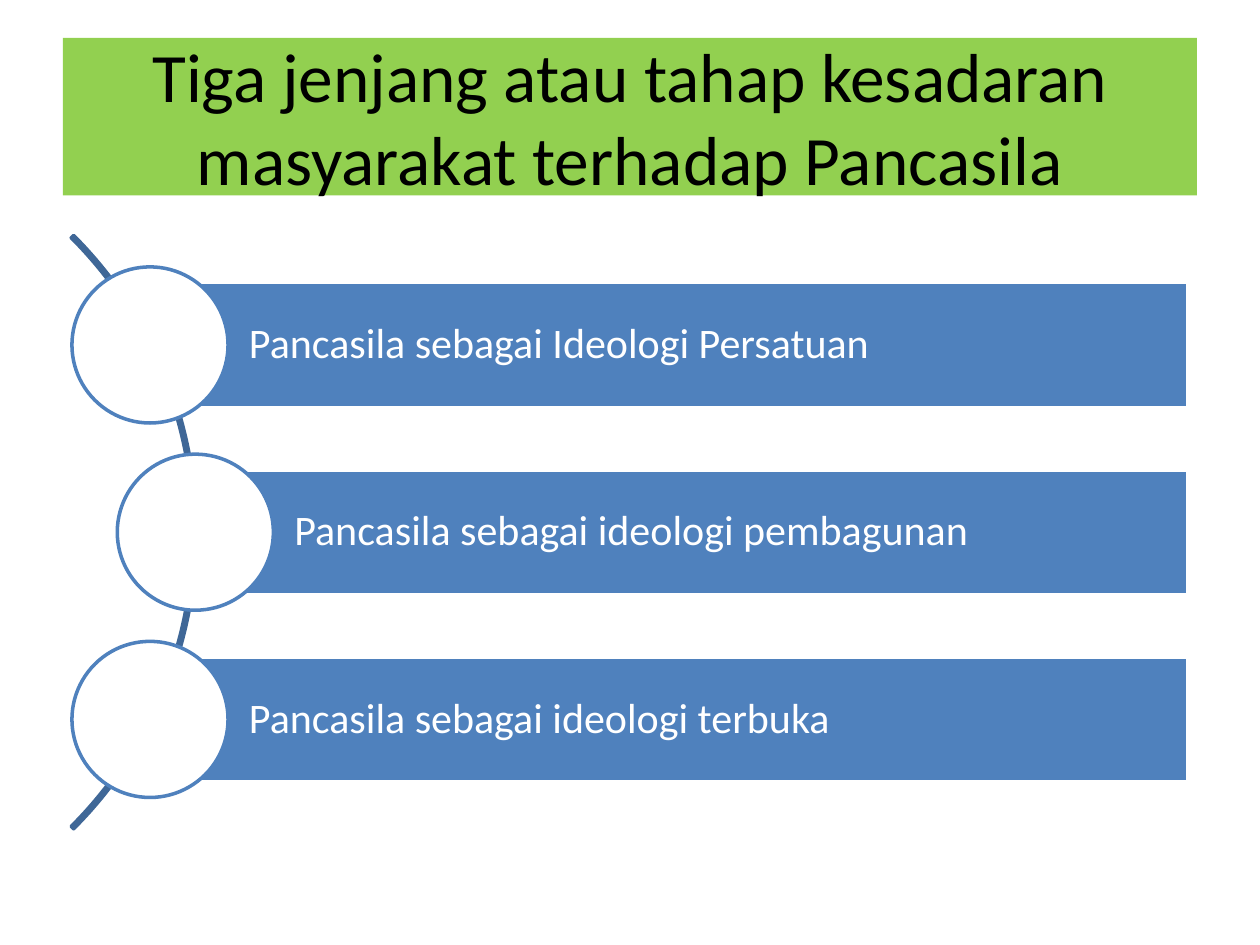
from pptx import Presentation
from pptx.dml.color import RGBColor
from pptx.enum.shapes import MSO_SHAPE
from pptx.enum.text import MSO_ANCHOR, PP_ALIGN
from pptx.util import Pt

BLUE = "4F81BD"
WHITE = "FFFFFF"
STAGES = [
    ("Pancasila sebagai Ideologi Persatuan", 85.7),
    ("Pancasila sebagai ideologi pembagunan", 111.6),
    ("Pancasila sebagai ideologi terbuka", 85.7),
]
FIRST_CENTER = 197.1
STAGE_PITCH = 107
BAR_RIGHT = 679
BAR_HEIGHT = 71.3
CIRCLE_SIZE = 89.2
ARC_SIZE = 479.5


def color(hex_string):
    return RGBColor.from_string(hex_string)


def add_shape(slide, kind, left, top, width, height, fill=None, line=None):
    shape = slide.shapes.add_shape(kind, Pt(left), Pt(top), Pt(width), Pt(height))
    shape.shadow.inherit = False
    if fill:
        shape.fill.solid()
        shape.fill.fore_color.rgb = color(fill)
    else:
        shape.fill.background()
    if line:
        shape.line.color.rgb = color(line)
        shape.line.width = Pt(2)
    else:
        shape.line.fill.background()
    return shape


def set_text(shape, text, size, text_color, alignment):
    text_frame = shape.text_frame
    text_frame.word_wrap = True
    text_frame.vertical_anchor = MSO_ANCHOR.MIDDLE
    text_frame.text = text
    paragraph = text_frame.paragraphs[0]
    paragraph.alignment = alignment
    font = paragraph.runs[0].font
    font.name = "Calibri"
    font.size = Pt(size)
    font.color.rgb = color(text_color)


def add_title(slide, text):
    title = add_shape(slide, MSO_SHAPE.RECTANGLE, 36, 21.6, 648, 90, "92D050")
    set_text(title, text, 39.6, "000000", PP_ALIGN.CENTER)


def add_arc(slide, center):
    arc = add_shape(slide, MSO_SHAPE.BLOCK_ARC, -367.2, center - ARC_SIZE / 2,
                    ARC_SIZE, ARC_SIZE, line="3F6797")
    for index, value in enumerate((189, 27, 0.004)):
        arc.adjustments[index] = value


def add_stage(slide, text, center_x, center_y):
    bar = add_shape(slide, MSO_SHAPE.RECTANGLE, center_x, center_y - BAR_HEIGHT / 2,
                    BAR_RIGHT - center_x, BAR_HEIGHT, BLUE, WHITE)
    set_text(bar, text, 24, WHITE, PP_ALIGN.LEFT)
    bar.text_frame.margin_left = Pt(56.6)
    bar.text_frame.margin_right = Pt(5)
    bar.text_frame.margin_top = bar.text_frame.margin_bottom = Pt(5)
    bar.text_frame.paragraphs[0].line_spacing = 0.9
    add_shape(slide, MSO_SHAPE.OVAL, center_x - CIRCLE_SIZE / 2,
              center_y - CIRCLE_SIZE / 2, CIRCLE_SIZE, CIRCLE_SIZE, WHITE, BLUE)


def main():
    presentation = Presentation()
    presentation.slide_width = Pt(720)
    presentation.slide_height = Pt(540)
    slide = presentation.slides.add_slide(presentation.slide_layouts[6])
    add_title(slide, "Tiga jenjang atau tahap kesadaran masyarakat terhadap Pancasila")
    add_arc(slide, FIRST_CENTER + STAGE_PITCH)
    for index, (text, center_x) in enumerate(STAGES):
        add_stage(slide, text, center_x, FIRST_CENTER + index * STAGE_PITCH)
    presentation.save("out.pptx")


if __name__ == "__main__":
    main()
